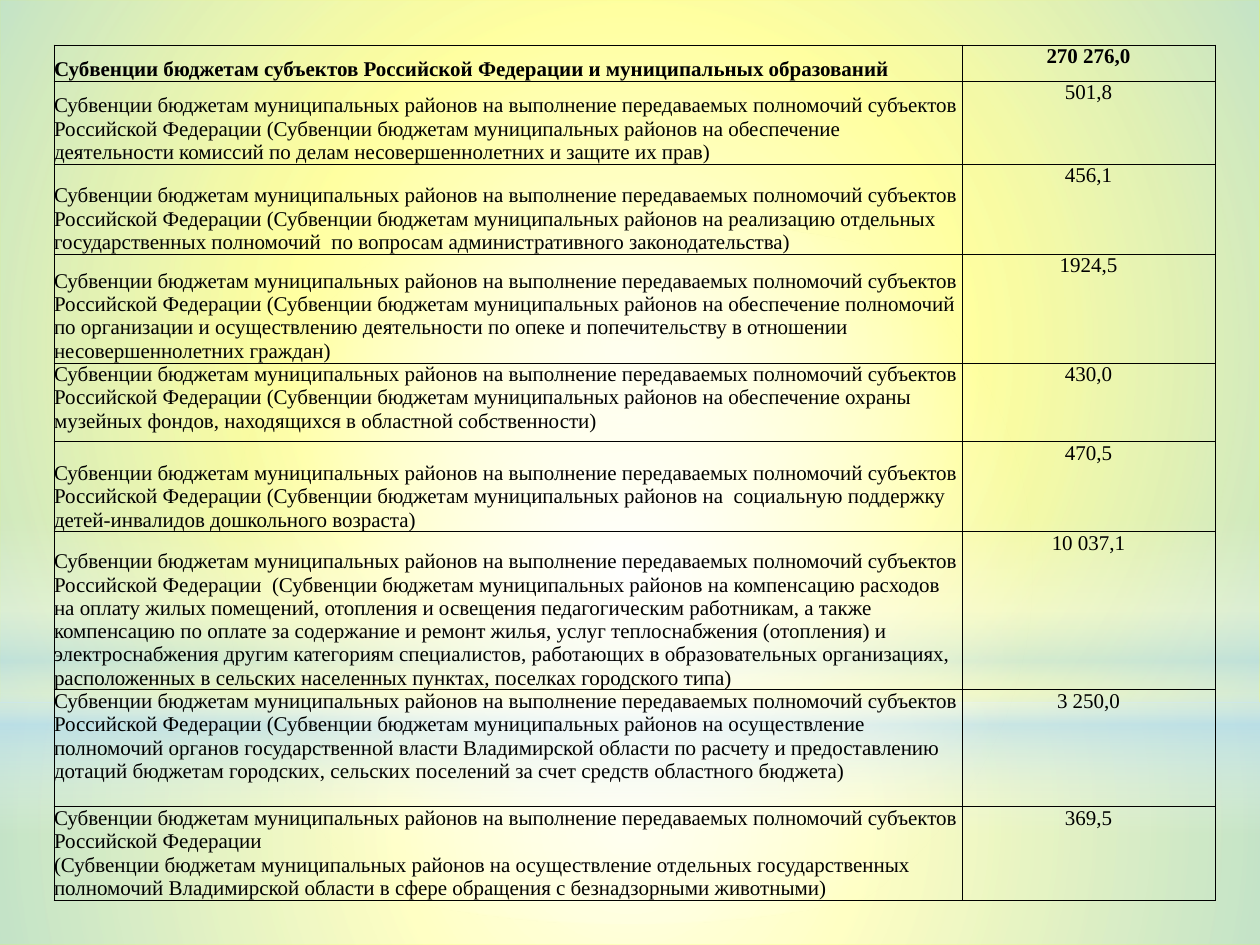
from dataclasses import dataclass

from pptx import Presentation
from pptx.dml.color import RGBColor
from pptx.enum.shapes import MSO_SHAPE
from pptx.enum.text import MSO_ANCHOR, PP_ALIGN
from pptx.oxml import parse_xml
from pptx.oxml.ns import nsdecls
from pptx.util import Pt

EMU_PER_PX = 914400 / 126


def px(length):
    return round(length * EMU_PER_PX)


@dataclass(frozen=True)
class Theme:
    backdrop: str = "FFFF00"
    light: str = "FFFFFF"
    sky: str = "B4DCFA"
    ink: str = "000000"
    font: str = "Times New Roman"
    text_size: int = 12
    border_width: float = 0.5


def apply_format(target, values):
    for name, value in values.items():
        setattr(target, name, value)


class SlideBuilder:
    def __init__(self, slide, theme):
        self.slide = slide
        self.theme = theme

    def backdrop(self):
        fill = self.slide.background.fill
        fill.solid()
        fill.fore_color.rgb = RGBColor.from_string(self.theme.backdrop)

    def glow(self, kind, box, stops, linear=False):
        glow = self.slide.shapes.add_shape(kind, *map(px, box))
        glow.shadow.inherit = False
        glow.line.fill.background()
        glow.fill.background()
        stop_xml = "".join(
            f'<a:gs pos="{pos * 1000}"><a:srgbClr val="{color}">'
            f'<a:alpha val="{alpha * 1000}"/></a:srgbClr></a:gs>'
            for pos, color, alpha in stops
        )
        direction = (
            '<a:lin ang="5400000" scaled="0"/>' if linear else
            '<a:path path="circle"><a:fillToRect l="50000" t="50000" '
            'r="50000" b="50000"/></a:path>'
        )
        gradient = parse_xml(
            f'<a:gradFill {nsdecls("a")} rotWithShape="1">'
            f'<a:gsLst>{stop_xml}</a:gsLst>{direction}</a:gradFill>'
        )
        properties = glow.fill._xPr
        properties.replace(properties.noFill, gradient)

    def cell(self, cell, text, bold, align, anchor):
        margins = {f"margin_{side}": 0 for side in ("left", "right", "top", "bottom")}
        apply_format(cell, {"text": text, "vertical_anchor": anchor, **margins})
        cell.fill.background()
        paragraph = cell.text_frame.paragraphs[0]
        paragraph.alignment = align
        for run in paragraph.runs:
            apply_format(run.font, {
                "name": self.theme.font,
                "size": Pt(self.theme.text_size),
                "bold": bold,
            })
            run.font.color.rgb = RGBColor.from_string(self.theme.ink)
        properties = cell._tc.get_or_add_tcPr()
        for position, side in enumerate("LRTB"):
            properties.insert(position, parse_xml(
                f'<a:ln{side} {nsdecls("a")} w="{Pt(self.theme.border_width)}">'
                f'<a:solidFill><a:srgbClr val="{self.theme.ink}"/></a:solidFill>'
                f'</a:ln{side}>'
            ))

    def table(self, left, top, widths, rows):
        height = sum(row[0] for row in rows)
        table = self.slide.shapes.add_table(
            len(rows), len(widths), px(left), px(top), px(sum(widths)), px(height)
        ).table
        apply_format(table, {"first_row": False, "horz_banding": False})
        for column, width in zip(table.columns, widths):
            column.width = px(width)
        for index, (row_height, anchor, purpose, amount) in enumerate(rows):
            table.rows[index].height = px(row_height)
            bold = index == 0
            self.cell(table.cell(index, 0), purpose, bold, PP_ALIGN.LEFT, anchor)
            self.cell(table.cell(index, 1), amount, bold, PP_ALIGN.CENTER, MSO_ANCHOR.TOP)


def subvention(detail, gap=" "):
    districts = "Субвенции бюджетам муниципальных районов на "
    return (
        f"{districts}выполнение передаваемых полномочий субъектов "
        f"Российской Федерации{gap}({districts}{detail})"
    )


TOP, BOTTOM = MSO_ANCHOR.TOP, MSO_ANCHOR.BOTTOM
SUBVENTIONS = [
    (36, BOTTOM, "Субвенции бюджетам субъектов Российской Федерации и "
     "муниципальных образований", "270 276,0"),
    (83, BOTTOM, subvention(
        "обеспечение деятельности комиссий по делам несовершеннолетних "
        "и защите их прав"), "501,8"),
    (90, BOTTOM, subvention(
        "реализацию отдельных государственных полномочий  по вопросам "
        "административного законодательства"), "456,1"),
    (109, BOTTOM, subvention(
        "обеспечение полномочий по организации и осуществлению деятельности "
        "по опеке и попечительству в отношении несовершеннолетних граждан"), "1924,5"),
    (79, TOP, subvention(
        "обеспечение охраны музейных фондов, находящихся в областной "
        "собственности"), "430,0"),
    (90, BOTTOM, subvention(
        " социальную поддержку детей-инвалидов дошкольного возраста"), "470,5"),
    (158, BOTTOM, subvention(
        "компенсацию расходов на оплату жилых помещений, отопления и освещения "
        "педагогическим работникам, а также компенсацию по оплате за содержание "
        "и ремонт жилья, услуг теплоснабжения (отопления) и электроснабжения "
        "другим категориям специалистов, работающих в образовательных "
        "организациях, расположенных в сельских населенных пунктах, поселках "
        "городского типа", gap="  "), "10 037,1"),
    (117, TOP, subvention(
        "осуществление полномочий органов государственной власти Владимирской "
        "области по расчету и предоставлению дотаций бюджетам городских, "
        "сельских поселений за счет средств областного бюджета"), "3 250,0"),
    (93, BOTTOM, subvention(
        "осуществление отдельных государственных полномочий Владимирской "
        "области в сфере обращения с безнадзорными животными", gap=" \v"), "369,5"),
]


def main():
    presentation = Presentation()
    apply_format(presentation, {"slide_width": px(1260), "slide_height": px(945)})
    slide = presentation.slides.add_slide(presentation.slide_layouts[6])
    theme = Theme()
    light, sky = theme.light, theme.sky
    builder = SlideBuilder(slide, theme)
    builder.backdrop()
    builder.glow(MSO_SHAPE.RECTANGLE, (0, 703, 1260, 242),
                 [(0, light, 91), (37, light, 76), (100, sky, 79)])
    builder.glow(MSO_SHAPE.RECTANGLE, (0, 0, 1260, 703),
                 [(0, light, 89), (48, light, 62), (100, sky, 79)])
    builder.glow(MSO_SHAPE.RECTANGLE, (0, 519, 1260, 315),
                 [(0, light, 0), (29, light, 30), (45, sky, 40),
                  (55, light, 26), (65, sky, 60), (100, light, 0)], linear=True)
    builder.glow(MSO_SHAPE.OVAL, (0, 220, 1260, 703),
                 [(0, light, 100), (56, light, 0)])
    builder.table(54, 45, (908, 253), SUBVENTIONS)
    presentation.save("out.pptx")


if __name__ == "__main__":
    main()
